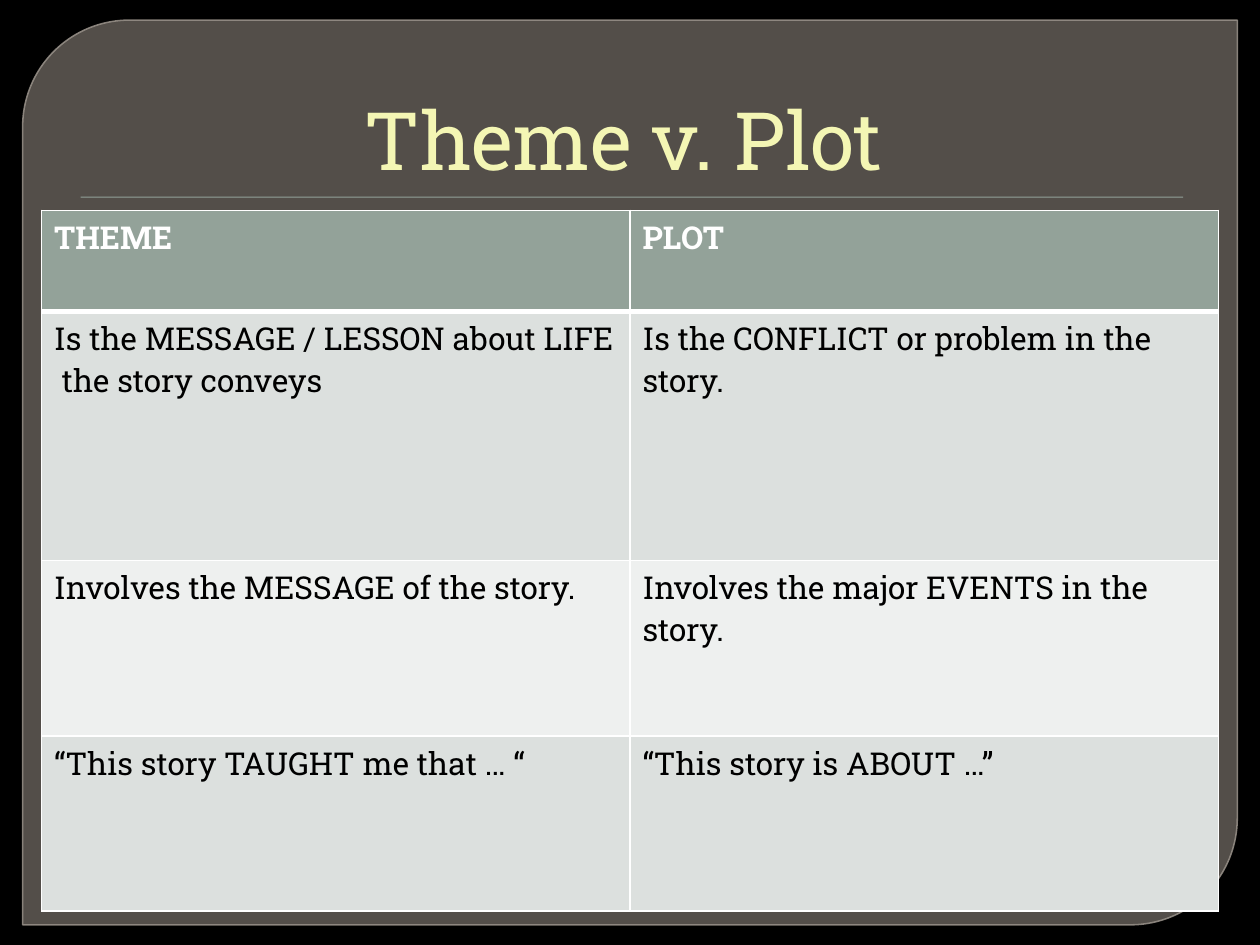
from pptx import Presentation
from pptx.dml.color import RGBColor
from pptx.enum.shapes import MSO_SHAPE
from pptx.enum.text import MSO_ANCHOR, PP_ALIGN
from pptx.oxml.ns import qn
from pptx.util import Inches, Pt
from lxml import etree

PANEL_SHAPE = MSO_SHAPE.ROUND_2_DIAG_RECTANGLE
RECTANGLE = MSO_SHAPE.RECTANGLE
CENTER = PP_ALIGN.CENTER
BOTTOM = MSO_ANCHOR.BOTTOM

FONT = "Roboto Slab"
BLACK = RGBColor(0x00, 0x00, 0x00)
WHITE = RGBColor(0xFF, 0xFF, 0xFF)
TAUPE = RGBColor(0x81, 0x79, 0x71)
TAUPE_LINE = RGBColor(0x97, 0x90, 0x88)
SAGE = RGBColor(0x93, 0xA2, 0x99)
BAND_DARK = RGBColor(0xDC, 0xE0, 0xDE)
BAND_LIGHT = RGBColor(0xEE, 0xF0, 0xEF)
CREAM = RGBColor(0xF4, 0xF6, 0xB4)

# Content
TITLE = "Theme v. Plot "
ROWS = [
    ("THEME", "PLOT"),
    ("Is the MESSAGE / LESSON about LIFE  the story conveys",
     "Is the CONFLICT or problem in the story."),
    ("Involves the MESSAGE of the story.",
     "Involves the major EVENTS in the story."),
    ("“This story TAUGHT me that … “", "“This story is ABOUT …”"),
]
ROW_HEIGHTS = [0.8, 1.98, 1.39, 1.39]
COL_WIDTH = 4.67


def set_alpha(color_format_parent, percent):
    color = color_format_parent.find(".//" + qn("a:srgbClr"))
    etree.SubElement(color, qn("a:alpha"), val=str(percent * 1000))


def add_plain_shape(s, kind, box, color):
    sp = s.shapes.add_shape(kind, *map(Inches, box))
    sp.shadow.inherit = False
    sp.fill.solid()
    sp.fill.fore_color.rgb = color
    return sp


def style_run(r, size, color, bold=False):
    r.font.name = FONT
    r.font.size = Pt(size)
    r.font.bold = bold
    r.font.color.rgb = color


def set_borders(cell, header):
    tc_pr = cell._tc.get_or_add_tcPr()
    for i, side in enumerate(("lnL", "lnR", "lnT", "lnB")):
        width = 3 if header and side == "lnB" else 1
        ln = etree.Element(qn("a:" + side), w=str(Pt(width)))
        fill = etree.SubElement(ln, qn("a:solidFill"))
        etree.SubElement(fill, qn("a:srgbClr"), val=str(WHITE))
        tc_pr.insert(i, ln)


prs = Presentation()
prs.slide_width, prs.slide_height = Inches(10), Inches(7.5)
s = prs.slides.add_slide(prs.slide_layouts[6])
s.background.fill.solid()
s.background.fill.fore_color.rgb = BLACK

# Translucent panel
panel = add_plain_shape(s, PANEL_SHAPE, (0.18, 0.16, 9.64, 7.18), TAUPE)
panel.adjustments[0] = 0.118
panel.adjustments[1] = 0
panel.line.color.rgb = TAUPE_LINE
panel.line.width = Pt(0.87)
set_alpha(panel._element.spPr.find(qn("a:solidFill")), 65)
set_alpha(panel._element.spPr.find(qn("a:ln")), 88)

# Rule under the title
rule = add_plain_shape(s, RECTANGLE, (0.64, 1.56, 8.75, 0.01), SAGE)
rule.line.fill.background()

# Title
tf = s.shapes.add_textbox(*map(Inches, (0.5, 0.28, 9, 1.25))).text_frame
tf.word_wrap = True
tf.vertical_anchor = BOTTOM
p = tf.paragraphs[0]
p.text = TITLE
p.alignment = CENTER
p._p.get_or_add_pPr().set("marL", str(Inches(0.06)))
style_run(p.runs[0], 46, CREAM)

# Comparison table
table = s.shapes.add_table(
    len(ROWS), 2, Inches(0.33), Inches(1.67),
    Inches(2 * COL_WIDTH), Inches(sum(ROW_HEIGHTS))).table
for column in table.columns:
    column.width = Inches(COL_WIDTH)
for i, (texts, height) in enumerate(zip(ROWS, ROW_HEIGHTS)):
    table.rows[i].height = Inches(height)
    header = i == 0
    band = SAGE if header else BAND_DARK if i % 2 else BAND_LIGHT
    for j, text in enumerate(texts):
        cell = table.cell(i, j)
        cell.fill.solid()
        cell.fill.fore_color.rgb = band
        set_borders(cell, header)
        cell.text_frame.text = text
        style_run(cell.text_frame.paragraphs[0].runs[0], 18,
                  WHITE if header else BLACK, header)

prs.save("out.pptx")
